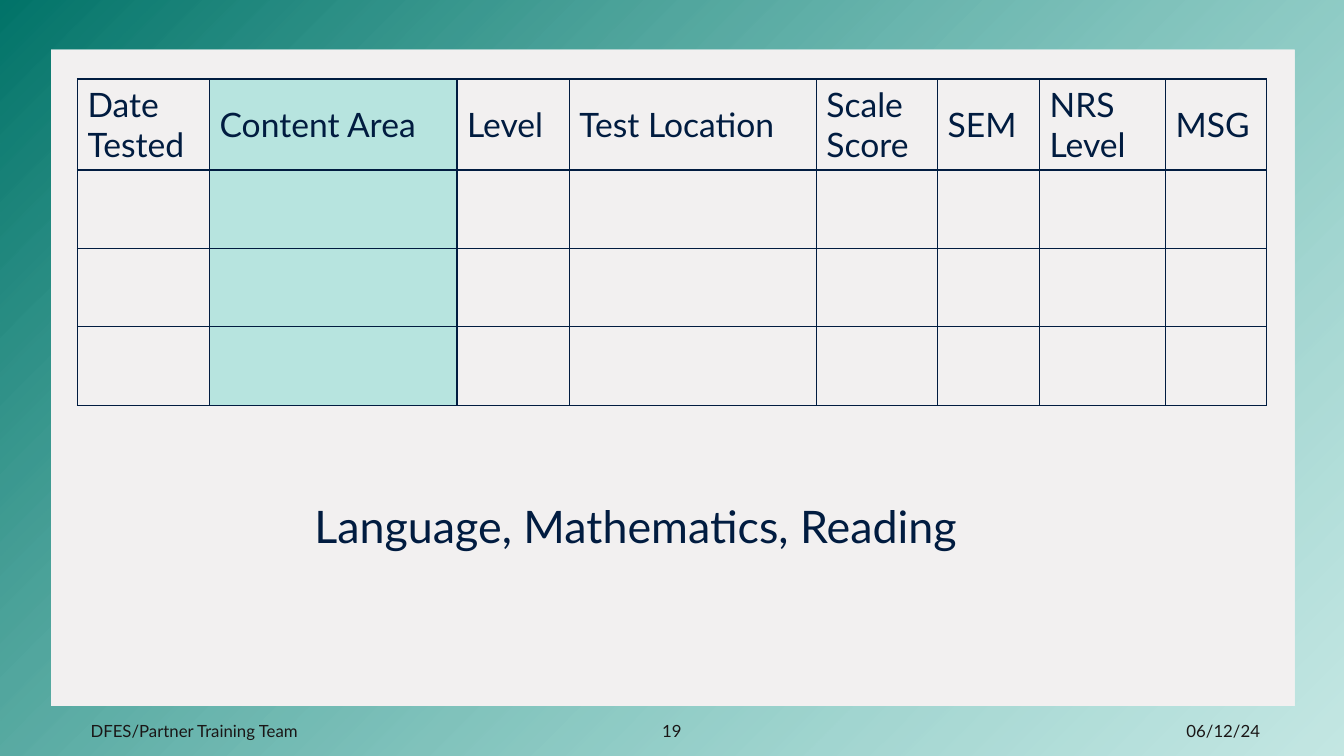
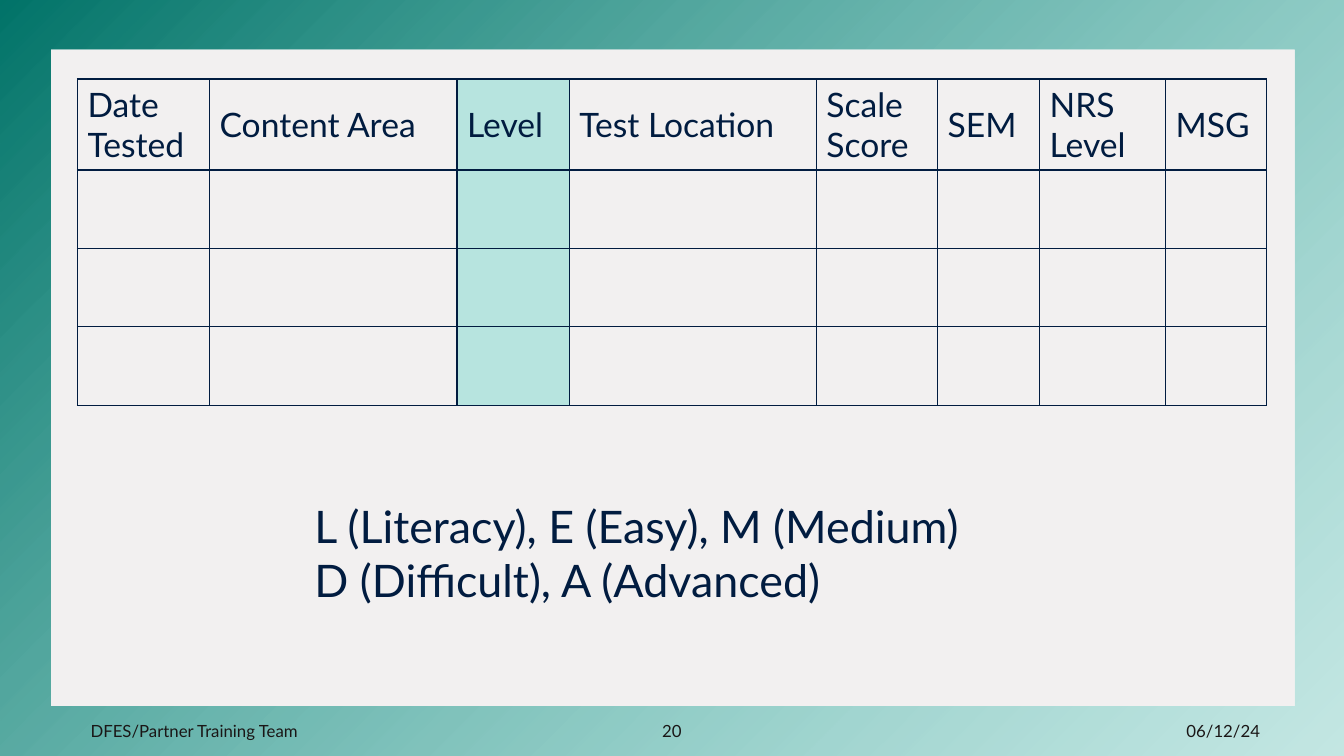
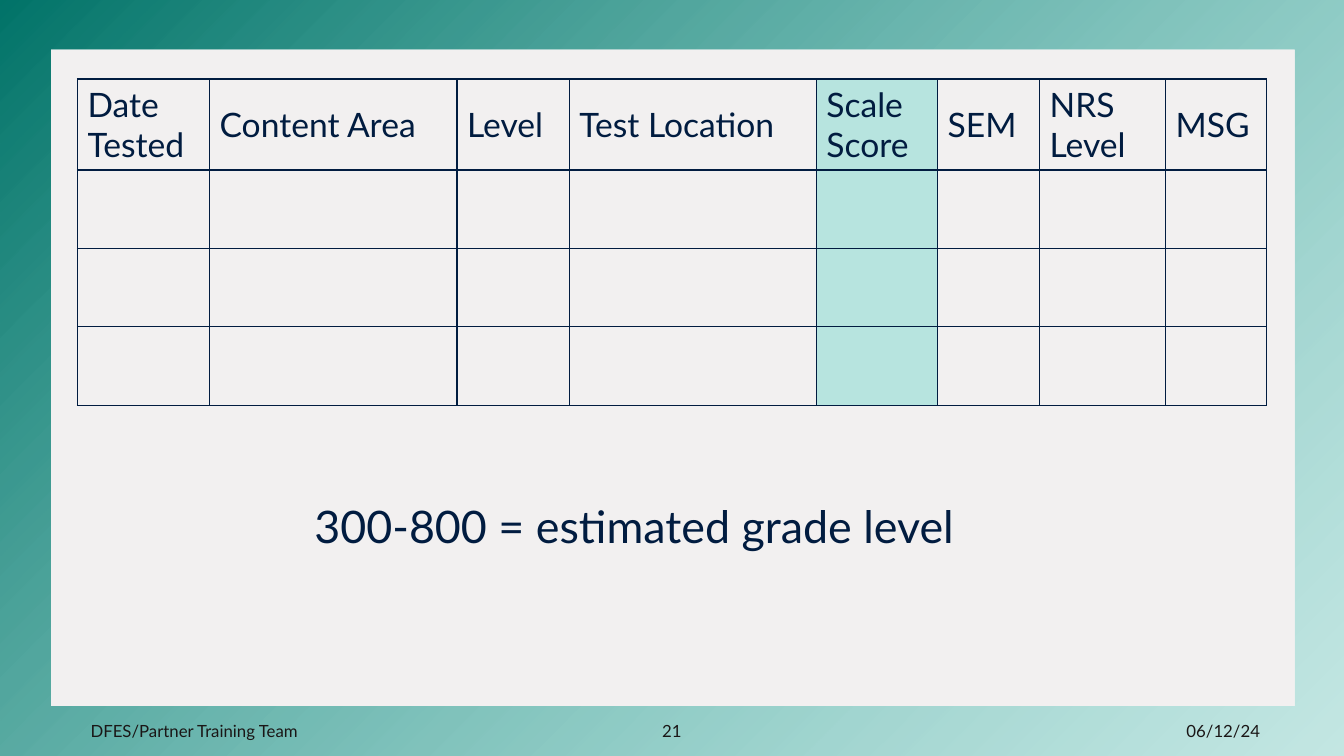
"""Build three slides that explain the columns of a test score table."""
import dataclasses

import lxml.etree
import pptx
import pptx.dml.color
import pptx.enum.shapes
import pptx.enum.text
import pptx.oxml
import pptx.oxml.ns
import pptx.util

Pt = pptx.util.Pt
RGB = pptx.dml.color.RGBColor.from_string
qn = pptx.oxml.ns.qn
ALIGN = pptx.enum.text.PP_ALIGN
MIDDLE = pptx.enum.text.MSO_ANCHOR.MIDDLE
TOP = pptx.enum.text.MSO_ANCHOR.TOP


@dataclasses.dataclass(frozen=True)
class Theme:
    font: str = "Lato"
    paper: str = "F2F0F0"
    deep: str = "027469"
    mint: str = "7ED9D0"
    navy: str = "011C40"
    ink: str = "1A1616"
    small: int = 12
    head: int = 24
    body: int = 32


theme = Theme()


def write(frame, lines, size, tint, align=ALIGN.LEFT):
    for num, line in enumerate(lines):
        para = frame.add_paragraph() if num else frame.paragraphs[0]
        para.alignment = align
        run = para.add_run()
        run.text = line
        for key, value in {"name": theme.font, "size": Pt(size)}.items():
            setattr(run.font, key, value)
        run.font.color.rgb = RGB(tint)


def fade(color, share):
    alpha = lxml.etree.SubElement(color, qn("a:alpha"))
    alpha.set("val", str(share * 1000))


WIDE, HIGH, EDGE = 960, 540, 36
LEFT, ABOVE = 55.4, 56.5
HEADS = {
    "Date Tested": 94.3,
    "Content Area": 176.8,
    "Level": 80.2,
    "Test Location": 176.5,
    "Scale Score": 86.6,
    "SEM": 72.9,
    "NRS Level": 90,
    "MSG": 71.8,
}
ROWS = [65, 56, 56, 56]
names, widths = list(HEADS), list(HEADS.values())

PAGES = [
    ("Content Area", ["Language, Mathematics, Reading"]),
    ("Level", ["L (Literacy), E (Easy), M (Medium)", "D (Difficult), A (Advanced)"]),
    ("Scale Score", ["300-800 = estimated grade level"]),
]

deck = pptx.Presentation()
deck.slide_width, deck.slide_height = Pt(WIDE), Pt(HIGH)
back = deck.slide_master.background.fill
back.solid()
back.fore_color.rgb = RGB(theme.paper)

for page, (topic, notes) in enumerate(PAGES, 19):
    slide = deck.slides.add_slide(deck.slide_layouts[6])
    shapes = slide.shapes

    pen = shapes.build_freeform(0, 0, scale=1.0)
    pen.add_line_segments([(Pt(x), Pt(y)) for x, y in [(WIDE, 0), (WIDE, HIGH), (0, HIGH)]])
    pen.move_to(Pt(EDGE), Pt(EDGE))
    far, low = WIDE - EDGE, HIGH - EDGE
    pen.add_line_segments([(Pt(x), Pt(y)) for x, y in [(EDGE, low), (far, low), (far, EDGE)]])
    border = pen.convert_to_shape()
    border.fill.gradient()
    border.fill.gradient_angle = 315
    for stop, tint in zip(border.fill.gradient_stops, [theme.deep, theme.mint]):
        stop.color.rgb = RGB(tint)
    fade(list(border.element.iter(qn("a:srgbClr")))[-1], 40)

    col = names.index(topic)
    band = shapes.add_shape(
        pptx.enum.shapes.MSO_SHAPE.RECTANGLE,
        Pt(LEFT + sum(widths[:col])), Pt(ABOVE), Pt(widths[col]), Pt(sum(ROWS)),
    )
    band.fill.solid()
    band.fill.fore_color.rgb = RGB(theme.mint)
    fade(next(band.element.iter(qn("a:srgbClr"))), 50)
    for shape in (border, band):
        shape.line.fill.background()
        shape.shadow.inherit = False

    grid = shapes.add_table(
        len(ROWS), len(names), Pt(LEFT), Pt(ABOVE), Pt(sum(widths)), Pt(sum(ROWS))
    ).table
    for key in ("first_row", "horz_banding"):
        setattr(grid, key, False)
    for part, width in zip(grid.columns, widths):
        part.width = Pt(width)
    for part, height in zip(grid.rows, ROWS):
        part.height = Pt(height)
    for cell in grid.iter_cells():
        cell.vertical_anchor = MIDDLE
        for side in ("lnL", "lnR", "lnT", "lnB"):
            line = lxml.etree.SubElement(cell._tc.get_or_add_tcPr(), qn("a:" + side))
            line.set("w", str(Pt(1)))
            fill = lxml.etree.SubElement(line, qn("a:solidFill"))
            lxml.etree.SubElement(fill, qn("a:srgbClr")).set("val", theme.navy)
        cell.fill.background()
    for cell, name in zip(grid.rows[0].cells, names):
        write(cell.text_frame, [name], theme.head, theme.navy)

    foot = (507.6, 28.8, theme.small, theme.ink, MIDDLE)
    texts = [
        (["DFES/Partner Training Team"], 57.6, 286, ALIGN.LEFT, foot),
        ([str(page)], 372, 216, ALIGN.CENTER, foot),
        (["06/12/24"], 727.2, 180, ALIGN.RIGHT, foot),
        (notes, 217.5, 525, ALIGN.LEFT,
         (352.8, 7.2 + 38.4 * len(notes), theme.body, theme.navy, TOP)),
    ]
    for lines, x, width, align, (y, height, size, tint, anchor) in texts:
        frame = shapes.add_textbox(Pt(x), Pt(y), Pt(width), Pt(height)).text_frame
        for key, value in {"word_wrap": True, "vertical_anchor": anchor}.items():
            setattr(frame, key, value)
        write(frame, lines, size, tint, align)

deck.save("out.pptx")
